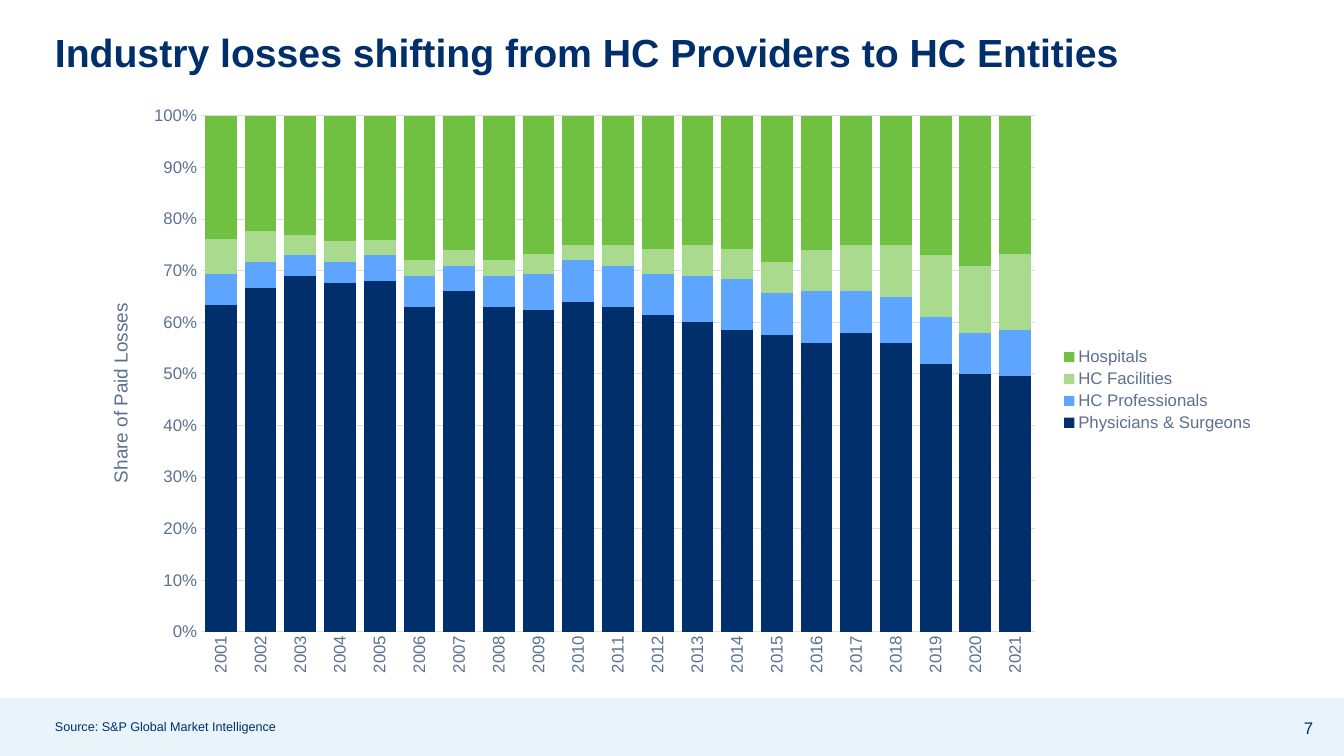
from dataclasses import dataclass

from lxml import etree
from pptx import Presentation
from pptx.chart.data import CategoryChartData
from pptx.dml.color import RGBColor
from pptx.enum.chart import XL_CHART_TYPE, XL_LEGEND_POSITION, XL_TICK_MARK
from pptx.enum.shapes import MSO_SHAPE
from pptx.enum.text import MSO_ANCHOR, PP_ALIGN
from pptx.oxml.ns import qn
from pptx.util import Emu, Pt

WIDTH, HEIGHT = 1344, 756
SCALE = 12192000 / WIDTH


@dataclass(frozen=True)
class Theme:
    font: str = "Arial"
    navy: str = "002F6B"
    blue: str = "5EA5FF"
    light_green: str = "A9DA8D"
    green: str = "70C141"
    slate: str = "5C718F"
    grid: str = "D8DEE6"
    band: str = "E8F4FA"
    title_size: float = 28
    axis_title_size: float = 13.5
    label_size: float = 12
    source_size: float = 9


THEME = Theme()


@dataclass(frozen=True)
class Box:
    left: int
    top: int
    width: int
    height: int

    def emu(self) -> list[Emu]:
        return [px(n) for n in (self.left, self.top, self.width, self.height)]


@dataclass(frozen=True)
class Label:
    text: str
    box: Box
    size: float
    bold: bool = False
    align: PP_ALIGN = PP_ALIGN.LEFT
    spacing: float = 0.9


@dataclass(frozen=True)
class LossSeries:
    name: str
    color: str
    shares: tuple[int, ...]


BAND = Box(0, 698, WIDTH, HEIGHT - 698)
CHART = Box(81, 95, 1184, 590)
PLOT = Box(201, 116, 834, 516)
AXIS_TITLE = Box(105, 300, 20, 179)

LABELS = (
    Label("Industry losses shifting from HC Providers to HC Entities",
          Box(45, 15, 1219, 79), THEME.title_size, bold=True),
    Label("7", Box(1278, 708, 61, 40), THEME.label_size,
          align=PP_ALIGN.CENTER, spacing=1.0),
    Label("Source: S&P Global Market Intelligence",
          Box(45, 715, 1220, 25), THEME.source_size),
)

YEARS = [str(year) for year in range(2001, 2022)]
SERIES = (
    LossSeries("Physicians & Surgeons", THEME.navy,
               (64, 66, 69, 67, 68, 63, 66, 63, 63, 64, 63,
                62, 60, 59, 57, 56, 58, 56, 52, 50, 50)),
    LossSeries("HC Professionals", THEME.blue,
               (6, 5, 4, 4, 5, 6, 5, 6, 7, 8, 8,
                8, 9, 10, 8, 10, 8, 9, 9, 8, 9)),
    LossSeries("HC Facilities", THEME.light_green,
               (7, 6, 4, 4, 3, 3, 3, 3, 4, 3, 4,
                5, 6, 6, 6, 8, 9, 10, 12, 13, 15)),
    LossSeries("Hospitals", THEME.green,
               (24, 22, 23, 24, 24, 28, 26, 28, 27, 25, 25,
                26, 25, 26, 28, 26, 25, 25, 27, 29, 27)),
)


def px(n: int) -> Emu:
    return Emu(round(n * SCALE))


def rgb(color: str) -> RGBColor:
    return RGBColor.from_string(color)


def style_font(font, size: float, color: str, bold: bool = False) -> None:
    font.name = THEME.font
    font.size = Pt(size)
    font.bold = bold
    font.color.rgb = rgb(color)


def style_line(line) -> None:
    line.color.rgb = rgb(THEME.grid)
    line.width = Pt(0.75)


def add_band(s) -> None:
    sp = s.shapes.add_shape(MSO_SHAPE.RECTANGLE, *BAND.emu())
    sp.shadow.inherit = False
    sp.fill.solid()
    sp.fill.fore_color.rgb = rgb(THEME.band)
    sp.line.fill.background()


def add_label(s, label: Label) -> None:
    tf = s.shapes.add_textbox(*label.box.emu()).text_frame
    tf.word_wrap = True
    tf.vertical_anchor = MSO_ANCHOR.MIDDLE
    tf.text = label.text
    p = tf.paragraphs[0]
    p.alignment = label.align
    p.line_spacing = label.spacing
    style_font(p.runs[0].font, label.size, THEME.navy, label.bold)


def make_layout(box: Box, inner: bool):
    layout = etree.Element(qn("c:layout"))
    manual = etree.SubElement(layout, qn("c:manualLayout"))
    entries = [("xMode", "edge"), ("yMode", "edge"),
               ("x", round((box.left - CHART.left) / CHART.width, 4)),
               ("y", round((box.top - CHART.top) / CHART.height, 4))]
    if inner:
        entries.insert(0, ("layoutTarget", "inner"))
        entries += [("w", round(box.width / CHART.width, 4)),
                    ("h", round(box.height / CHART.height, 4))]
    for tag, value in entries:
        etree.SubElement(manual, qn(f"c:{tag}")).set("val", str(value))
    return layout


def place(parent, box: Box, inner: bool, index: int) -> None:
    for old in parent.findall(qn("c:layout")):
        parent.remove(old)
    parent.insert(index, make_layout(box, inner))


def style_axes(chart) -> None:
    years, shares = chart.category_axis, chart.value_axis
    for axis in (years, shares):
        axis.major_tick_mark = axis.minor_tick_mark = XL_TICK_MARK.NONE
        style_font(axis.tick_labels.font, THEME.label_size, THEME.slate)
    style_line(years.format.line)
    years._element.find(qn("c:txPr")).find(qn("a:bodyPr")).set("rot", "-5400000")

    shares.minimum_scale, shares.maximum_scale = 0, 1
    shares.major_unit = 0.1
    shares.tick_labels.number_format = "0%"
    shares.tick_labels.number_format_is_linked = False
    shares.format.line.fill.background()
    style_line(shares.major_gridlines.format.line)
    tf = shares.axis_title.text_frame
    tf.text = "Share of Paid Losses"
    style_font(tf.paragraphs[0].runs[0].font, THEME.axis_title_size, THEME.slate)
    tf._txBody.find(qn("a:bodyPr")).set("rot", "-5400000")
    place(shares.axis_title._element, AXIS_TITLE, False, 1)


def add_loss_chart(s) -> None:
    data = CategoryChartData()
    data.categories = YEARS
    for series in SERIES:
        data.add_series(series.name, series.shares)
    chart = s.shapes.add_chart(
        XL_CHART_TYPE.COLUMN_STACKED_100, *CHART.emu(), data).chart
    style_font(chart.font, THEME.label_size, THEME.slate)
    chart.has_title = False
    chart.has_legend = True
    chart.legend.position = XL_LEGEND_POSITION.RIGHT
    chart.legend.include_in_layout = False
    style_font(chart.legend.font, THEME.label_size, THEME.slate)
    plot = chart.plots[0]
    plot.gap_width, plot.overlap = 25, 100
    plot.vary_by_categories = False
    for column, series in zip(plot.series, SERIES):
        column.format.fill.solid()
        column.format.fill.fore_color.rgb = rgb(series.color)
    style_axes(chart)
    place(chart._chartSpace.chart.plotArea, PLOT, True, 0)


def main() -> None:
    prs = Presentation()
    prs.slide_width, prs.slide_height = px(WIDTH), px(HEIGHT)
    s = prs.slides.add_slide(prs.slide_layouts[6])
    add_band(s)
    for label in LABELS:
        add_label(s, label)
    add_loss_chart(s)
    prs.save("out.pptx")


if __name__ == "__main__":
    main()
